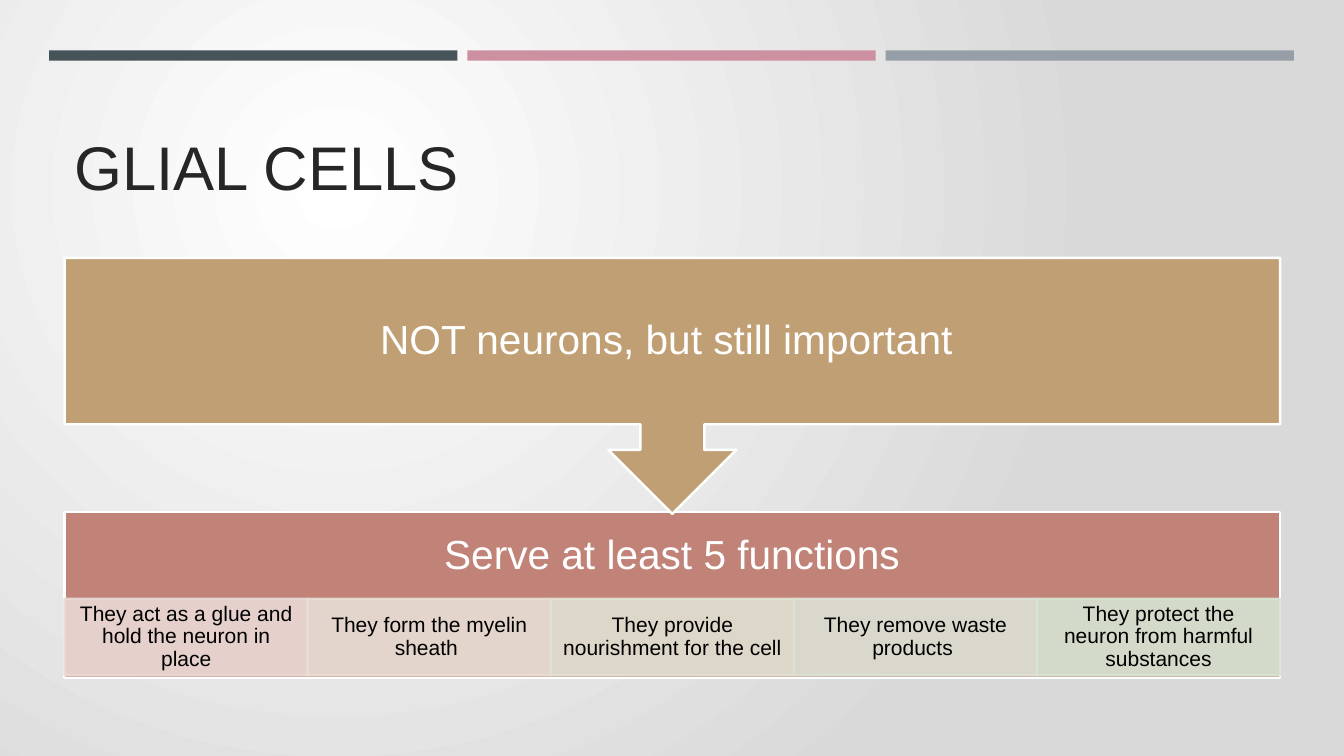
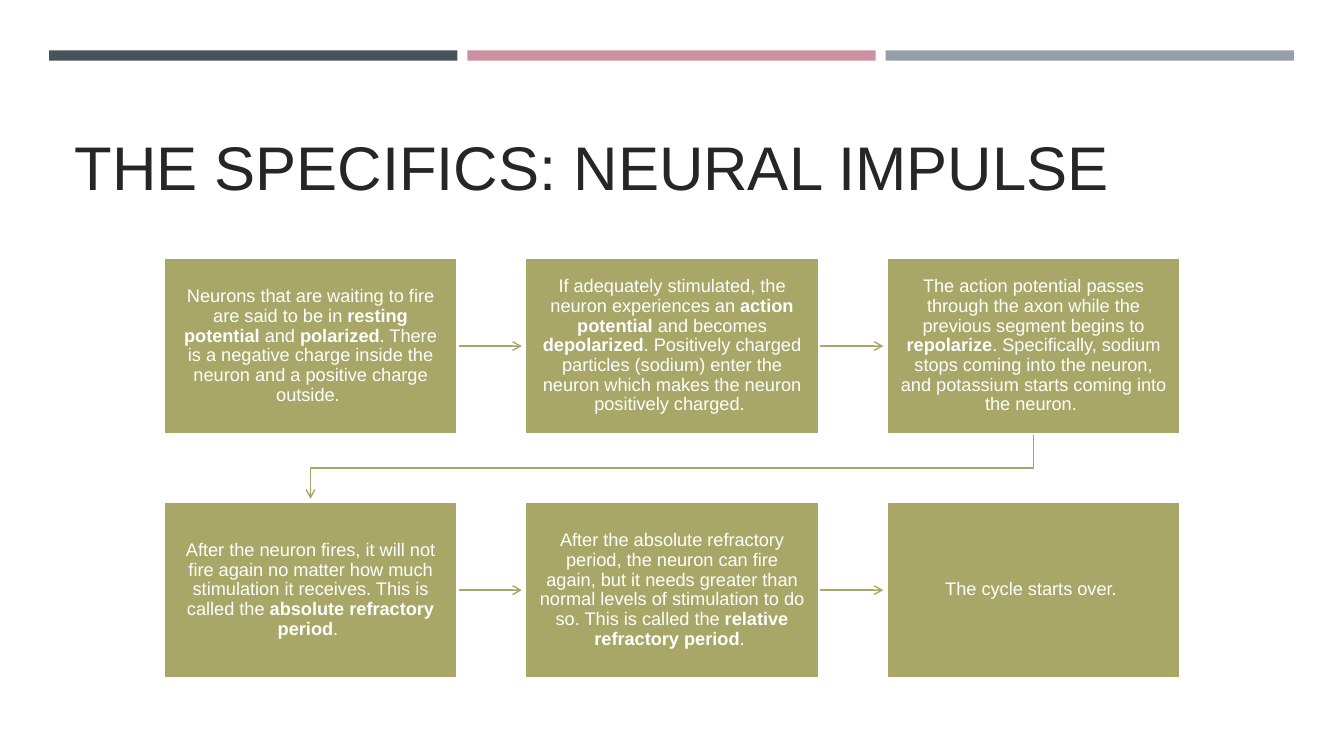
from lxml import etree
from pptx import Presentation
from pptx.dml.color import RGBColor
from pptx.enum.shapes import MSO_CONNECTOR, MSO_SHAPE
from pptx.enum.text import MSO_ANCHOR, PP_ALIGN
from pptx.oxml.ns import qn
from pptx.util import Cm, Pt

RECTANGLE = MSO_SHAPE.RECTANGLE
CALLOUT = MSO_SHAPE.DOWN_ARROW_CALLOUT
STRAIGHT = MSO_CONNECTOR.STRAIGHT
MIDDLE, BOTTOM = MSO_ANCHOR.MIDDLE, MSO_ANCHOR.BOTTOM
CENTER = PP_ALIGN.CENTER

FONT = "Arial"
WHITE = RGBColor(0xFF, 0xFF, 0xFF)
BLACK = RGBColor(0x00, 0x00, 0x00)
SILVER = RGBColor(0xD9, 0xD9, 0xD9)
INK = RGBColor(0x26, 0x26, 0x26)
SLATE = RGBColor(0x46, 0x53, 0x59)
PINK = RGBColor(0xCC, 0x90, 0xA0)
STEEL = RGBColor(0x96, 0x9F, 0xA7)
TAN = RGBColor(0xC0, 0x9F, 0x74)
BRICK = RGBColor(0xC1, 0x83, 0x77)
OLIVE = RGBColor(0xA8, 0xA7, 0x68)

# Shared content area, in centimetres
LEFT, WIDTH, TOP = 1.63, 30.63, 6.5


def add_block(slide, kind, box, fill, border, parts, size, color, insets):
    """Add a filled shape; every second text part is bold."""
    block = slide.shapes.add_shape(kind, *(Cm(length) for length in box))
    block.shadow.inherit = False
    block.fill.solid()
    block.fill.fore_color.rgb = fill
    block.line.color.rgb = border
    block.line.width = Pt(1.75)
    frame = block.text_frame
    frame.word_wrap = True
    frame.vertical_anchor = MIDDLE
    (frame.margin_left, frame.margin_top,
     frame.margin_right, frame.margin_bottom) = (Cm(inset) for inset in insets)
    paragraph = frame.paragraphs[0]
    paragraph.alignment = CENTER
    paragraph.line_spacing = 0.9
    for index, part in enumerate(parts):
        run = paragraph.add_run()
        run.text = part
        run.font.name = FONT
        run.font.size = Pt(size)
        run.font.bold = index % 2 == 1
        run.font.color.rgb = color
    return block


def style_arrow(arrow):
    """Give a line its colour and arrowhead, without a shadow."""
    arrow.line.color.rgb = OLIVE
    arrow.line.width = Pt(1)
    properties = arrow.element.spPr
    etree.SubElement(properties.get_or_add_ln(), qn("a:tailEnd"), type="arrow")
    etree.SubElement(properties, qn("a:effectLst"))


presentation = Presentation()
presentation.slide_width = Cm(33.87)
presentation.slide_height = Cm(19.05)
blank = presentation.slide_layouts[6]

# Bands and title on both slides
slides = []
for heading in ("GLIAL CELLS", "THE SPECIFICS: NEURAL IMPULSE"):
    slide = presentation.slides.add_slide(blank)
    slides.append(slide)
    for column, color in enumerate((SLATE, PINK, STEEL)):
        band = slide.shapes.add_shape(
            RECTANGLE, Cm(1.24 + column * 10.54), Cm(1.27), Cm(10.29), Cm(0.26))
        band.shadow.inherit = False
        band.fill.solid()
        band.fill.fore_color.rgb = color
        band.line.fill.background()
    title = slide.shapes.add_textbox(Cm(LEFT), Cm(1.96), Cm(WIDTH), Cm(3.3))
    title.text_frame.word_wrap = True
    title.text_frame.vertical_anchor = BOTTOM
    title_line = title.text_frame.paragraphs[0]
    title_line.text = heading
    title_line.line_spacing = 0.9
    title_font = title_line.runs[0].font
    title_font.name = FONT
    title_font.size = Pt(44)
    title_font.color.rgb = INK

glial, impulse = slides

# Backgrounds: radial gradient, then plain white
backdrop = glial.background.fill
backdrop.gradient()
for stop, color in zip(backdrop.gradient_stops, (WHITE, SILVER)):
    stop.color.rgb = color
gradient = next(glial.element.iter(qn("a:gradFill")))
gradient.remove(gradient.find(qn("a:lin")))
radial = etree.SubElement(gradient, qn("a:path"))
radial.set("path", "circle")
etree.SubElement(radial, qn("a:fillToRect"),
                 l="50000", t="50000", r="100000", b="100000")
impulse.background.fill.solid()
impulse.background.fill.fore_color.rgb = WHITE

# Glial cells: functions panel, its cells, and the callout above
add_block(glial, RECTANGLE, (LEFT, 12.9, WIDTH, 4.19), BRICK, WHITE,
          ["Serve at least 5 functions"], 29, WHITE, (0.58, 0.58, 0.58, 2.51))

functions = [
    ("They act as a glue and hold the neuron in place", RGBColor(0xE9, 0xD9, 0xD6)),
    ("They form the myelin sheath ", RGBColor(0xE8, 0xDF, 0xD6)),
    ("They provide nourishment for the cell ", RGBColor(0xE1, 0xE1, 0xD4)),
    ("They remove waste products ", RGBColor(0xDD, 0xE2, 0xD6)),
    ("They protect the neuron from harmful substances", RGBColor(0xD7, 0xE4, 0xD4)),
]
cell_width = WIDTH / len(functions)
for column, (function, tint) in enumerate(functions):
    cell = add_block(glial, RECTANGLE,
                     (LEFT + column * cell_width, 15.09, cell_width, 1.93),
                     tint, tint, [function], 15, BLACK, (0.3, 0.05, 0.3, 0.05))
    for shade in cell.element.spPr.iter(qn("a:srgbClr")):
        etree.SubElement(shade, qn("a:alpha"), val="90000")

add_block(glial, CALLOUT, (LEFT, TOP, WIDTH, 6.45), TAN, WHITE,
          ["NOT neurons, but still important "], 29, WHITE, (0.58,) * 4)

# Neural impulse: steps in reading order, three to a row
steps = [
    ["Neurons that are waiting to fire are said to be in ", "resting potential ",
     "and ", "polarized",
     ". There is a negative charge inside the neuron and a positive charge outside. "],
    ["If adequately stimulated, the neuron experiences an ", "action potential ",
     "and becomes ", "depolarized",
     ". Positively charged particles (sodium) enter the neuron which makes "
     "the neuron positively charged. "],
    ["The action potential passes through the axon while the previous segment "
     "begins to", " repolarize",
     ". Specifically, sodium stops coming into the neuron, and potassium starts "
     "coming into the neuron. "],
    ["After the neuron fires, it will not fire again no matter how much "
     "stimulation it receives. This is called the ",
     "absolute refractory period", ". "],
    ["After the absolute refractory period, the neuron can fire again, but it "
     "needs greater than normal levels of stimulation to do so. This is called the ",
     "relative refractory period", ". "],
    ["The cycle starts over. "],
]
COLUMNS = 3
STEP_LEFT, STEP_WIDTH, STEP_HEIGHT = 4.12, 7.41, 4.44
COLUMN_PITCH, ROW_PITCH = 9.11, 6.15
TIP_GAP = 0.08

for index, step in enumerate(steps):
    row, column = divmod(index, COLUMNS)
    x = STEP_LEFT + column * COLUMN_PITCH
    y = TOP + row * ROW_PITCH
    if column < COLUMNS - 1:
        middle = Cm(y + STEP_HEIGHT / 2)
        style_arrow(impulse.shapes.add_connector(
            STRAIGHT, Cm(x + STEP_WIDTH), middle,
            Cm(x + COLUMN_PITCH - TIP_GAP), middle))
    elif index < len(steps) - 1:
        # Bent arrow back to the start of the next row
        start_x, end_x = Cm(x + STEP_WIDTH / 2), Cm(STEP_LEFT + STEP_WIDTH / 2)
        turn_y = Cm(y + (STEP_HEIGHT + ROW_PITCH) / 2)
        outline = impulse.shapes.build_freeform(start_x, Cm(y + STEP_HEIGHT))
        outline.add_line_segments(
            [(start_x, turn_y), (end_x, turn_y),
             (end_x, Cm(y + ROW_PITCH - TIP_GAP))], close=False)
        row_return = outline.convert_to_shape()
        row_return.fill.background()
        style_arrow(row_return)
    add_block(impulse, RECTANGLE, (x, y, STEP_WIDTH, STEP_HEIGHT), OLIVE, WHITE,
              step, 13, WHITE, (0.36, 0.38, 0.36, 0.38))

presentation.save("out.pptx")
